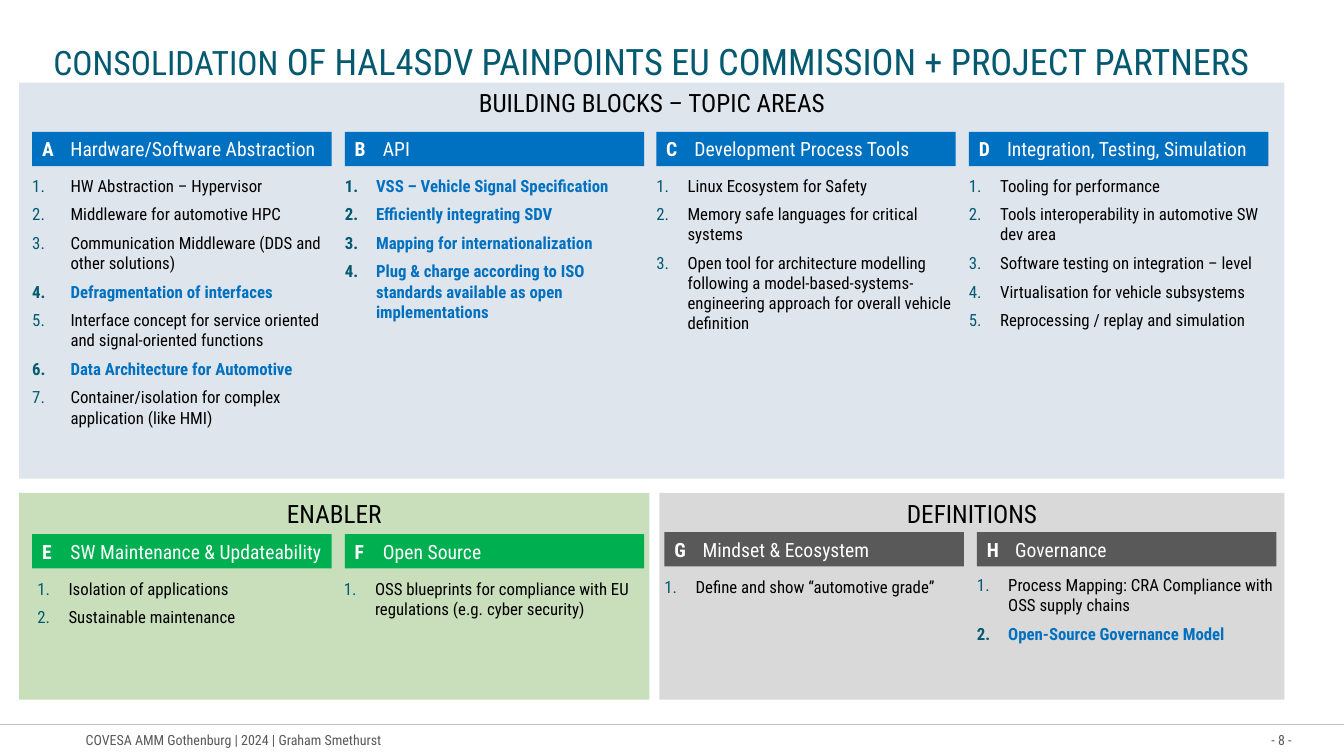
from pptx import Presentation
from pptx.dml.color import RGBColor
from pptx.enum.shapes import MSO_CONNECTOR, MSO_SHAPE
from pptx.enum.text import MSO_ANCHOR, PP_ALIGN
from pptx.util import Inches, Pt
from lxml.etree import SubElement
from pptx.oxml.ns import qn

FONT = "Roboto Condensed"
BLACK = RGBColor(0x00, 0x00, 0x00)
WHITE = RGBColor(0xFF, 0xFF, 0xFF)
TEAL = RGBColor(0x03, 0x59, 0x70)
BLUE = RGBColor(0x00, 0x70, 0xC0)
GREEN = RGBColor(0x00, 0xB0, 0x50)
GRAY = RGBColor(0x59, 0x59, 0x59)
RULE = RGBColor(0xBF, 0xBF, 0xBF)
PALE_BLUE = RGBColor(0xDE, 0xE5, 0xEC)
PALE_GREEN = RGBColor(0xC9, 0xDE, 0xBB)
PALE_GRAY = RGBColor(0xD9, 0xD9, 0xD9)

prs = Presentation()
prs.slide_width = Inches(13.33)
prs.slide_height = Inches(7.5)
slide = prs.slides.add_slide(prs.slide_layouts[6])


def write(para, text, size=12, color=BLACK, bold=False, align=PP_ALIGN.LEFT):
    para.alignment = align
    run = para.add_run()
    run.text = text
    run.font.name = FONT
    run.font.size = Pt(size)
    run.font.color.rgb = color
    run.font.bold = bold


def box(left, top, width, height, fill=None, anchor=MSO_ANCHOR.TOP):
    place = [Inches(n) for n in (left, top, width, height)]
    if fill is None:
        frame = slide.shapes.add_textbox(*place).text_frame
        frame.margin_left = frame.margin_right = 0
        frame.margin_top = frame.margin_bottom = 0
    else:
        shape = slide.shapes.add_shape(MSO_SHAPE.RECTANGLE, *place)
        shape.shadow.inherit = False
        shape.fill.solid()
        shape.fill.fore_color.rgb = fill
        shape.line.fill.background()
        frame = shape.text_frame
    frame.word_wrap = True
    frame.vertical_anchor = anchor
    return frame


rule = slide.shapes.add_connector(
    MSO_CONNECTOR.STRAIGHT, 0, Inches(7.19), Inches(13.33), Inches(7.19))
rule.line.color.rgb = RULE
rule.line.width = Pt(1)
SubElement(rule._element.spPr, qn("a:effectLst"))

footer = box(0.85, 7.26, 4, 0.17, anchor=MSO_ANCHOR.MIDDLE)
write(footer.paragraphs[0], "COVESA AMM Gothenburg | 2024 | Graham Smethurst",
      size=10, color=GRAY)
number = box(12.4, 7.26, 0.41, 0.17, anchor=MSO_ANCHOR.MIDDLE)
write(number.paragraphs[0], "- 8 -", size=10, color=GRAY, align=PP_ALIGN.RIGHT)

areas = [
    ("BUILDING BLOCKS – TOPIC AREAS", 0.19, 0.82, 12.55, 3.93, PALE_BLUE),
    ("ENABLER", 0.19, 4.89, 6.25, 2.05, PALE_GREEN),
    ("DEFINITIONS", 6.54, 4.89, 6.2, 2.05, PALE_GRAY),
]
for name, left, top, width, height, fill in areas:
    area = box(left, top, width, height, fill)
    write(area.paragraphs[0], name, size=18, align=PP_ALIGN.CENTER)

title = box(0.53, 0.38, 12.27, 0.44, anchor=MSO_ANCHOR.BOTTOM).paragraphs[0]
write(title, "CONSOLIDATION", size=24, color=TEAL)
write(title, " OF HAL4SDV PAINPOINTS EU COMMISSION + PROJECT PARTNERS",
      size=26, color=TEAL)

# Items starting with "*" are highlighted.
topics = [
    ("A", "Hardware/Software Abstraction", 0.32, 1.31, BLUE, 0.32, 1.74, 0.38, [
        "HW Abstraction – Hypervisor",
        "Middleware for automotive HPC",
        "Communication Middleware (DDS and other solutions)",
        "*Defragmentation of interfaces",
        "Interface concept for service oriented and signal-oriented functions",
        "*Data Architecture for Automotive",
        "Container/isolation for complex application (like HMI)"]),
    ("B", "API", 3.42, 1.31, BLUE, 3.42, 1.74, 0.31, [
        "*VSS – Vehicle Signal Specification",
        "*Efficiently integrating SDV",
        "*Mapping for internationalization",
        "*Plug & charge according to ISO standards available as open "
        "implementations"]),
    ("C", "Development Process Tools", 6.51, 1.31, BLUE, 6.51, 1.74, 0.31, [
        "Linux Ecosystem for Safety",
        "Memory safe languages for critical systems",
        "Open tool for architecture modelling following a model-based-systems-"
        "engineering approach for overall vehicle definition"]),
    ("D", "Integration, Testing, Simulation", 9.61, 1.31, BLUE, 9.61, 1.74, 0.31, [
        "Tooling for performance",
        "Tools interoperability in automotive SW dev area",
        "Software testing on integration – level",
        "Virtualisation for vehicle subsystems",
        "Reprocessing / replay and simulation"]),
    ("E", "SW Maintenance & Updateability", 0.32, 5.3, GREEN, 0.37, 5.74, 0.31, [
        "Isolation of applications",
        "Sustainable maintenance"]),
    ("F", "Open Source", 3.42, 5.3, GREEN, 3.41, 5.74, 0.31, [
        "OSS blueprints for compliance with EU regulations "
        "(e.g. cyber security)"]),
    ("G", "Mindset & Ecosystem", 6.59, 5.28, GRAY, 6.59, 5.72, 0.31, [
        "Define and show “automotive grade”"]),
    ("H", "Governance", 9.69, 5.28, GRAY, 9.69, 5.7, 0.31, [
        "Process Mapping: CRA Compliance with OSS supply chains",
        "*Open-Source Governance Model"]),
]
for letter, name, left, top, fill, list_x, list_y, indent, items in topics:
    head = box(left, top, 2.97, 0.34, fill, MSO_ANCHOR.MIDDLE)
    head.margin_right = Inches(0.05)
    para = head.paragraphs[0]
    tabs = SubElement(para._p.get_or_add_pPr(), qn("a:tabLst"))
    SubElement(tabs, qn("a:tab"), pos=str(Inches(0.28)), algn="l")
    write(para, letter, size=14, color=WHITE, bold=True)
    write(para, "\t" + name, size=14, color=WHITE)

    body = box(list_x, list_y, 2.97, 0.285 * len(items))
    for i, item in enumerate(items):
        para = body.add_paragraph() if i else body.paragraphs[0]
        props = para._p.get_or_add_pPr()
        props.set("marL", str(Inches(indent)))
        props.set("indent", str(-Inches(indent)))
        tint = SubElement(props, qn("a:buClr"))
        SubElement(tint, qn("a:srgbClr"), val=str(TEAL))
        SubElement(props, qn("a:buFont"), typeface="+mj-lt")
        SubElement(props, qn("a:buAutoNum"), type="arabicPeriod")
        para.space_after = Pt(6)
        key = item.startswith("*")
        write(para, item.lstrip("*"), color=BLUE if key else BLACK, bold=key)

prs.save("out.pptx")
